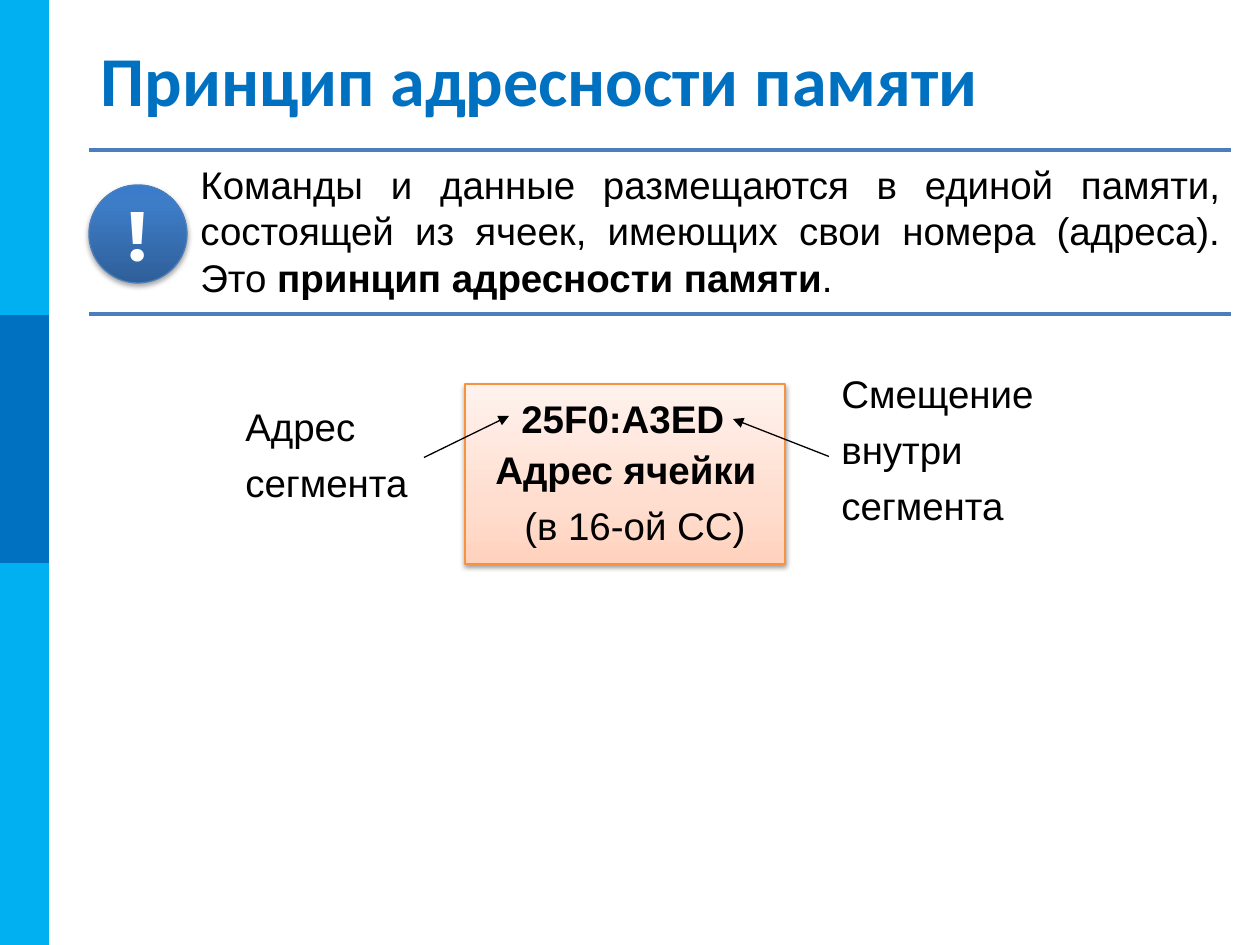
from lxml import etree
from pptx import Presentation
from pptx import util as u
from pptx.dml.color import RGBColor
from pptx.enum import shapes, text
from pptx.oxml import ns

PX = 914400 // 126
COLORS = {
    "sky": "00B0F0", "blue": "0070C0", "rule": "4B7EBC", "orange": "F69240",
    "black": "000000", "white": "FFFFFF",
}
PEACH = [(0, "FFD2BD"), (35, "FFDED0"), (100, "FFF2ED")]
NAVY = [(0, "2F5F99"), (80, "3D7CC7"), (100, "3A7CCB")]
LEFT, CENTER, JUSTIFY = (text.PP_ALIGN.LEFT, text.PP_ALIGN.CENTER,
                         text.PP_ALIGN.JUSTIFY)


def px(n):
    return u.Emu(n * PX)


def rgb(name):
    return RGBColor.from_string(COLORS[name])


def add_xml(parent, tag, **attrs):
    return etree.SubElement(parent, ns.qn(tag), {k: str(v) for k, v in attrs.items()})


class Deck:
    """Holds the text style and the current slide."""
    font, size, gap = "Arial", 22, 5.5

    def __init__(self, width, height):
        self.prs = Presentation()
        self.prs.slide_width, self.prs.slide_height = px(width), px(height)
        self.s = self.prs.slides.add_slide(self.prs.slide_layouts[5])

    def run(self, p, words, bold=False, color="black", font=None, size=None):
        r = p.add_run()
        r.text = words
        r.font.name, r.font.size = font or self.font, u.Pt(size or self.size)
        r.font.bold, r.font.color.rgb = bold, rgb(color)

    def title(self, x, y, w, h, words):
        sp = self.s.shapes.title
        sp.left, sp.top, sp.width, sp.height = map(px, (x, y, w, h))
        tf = sp.text_frame
        tf.auto_size = text.MSO_AUTO_SIZE.NONE
        tf.vertical_anchor = text.MSO_ANCHOR.MIDDLE
        p = tf.paragraphs[0]
        p.alignment = LEFT
        self.run(p, words, True, "blue", "Calibri", 40)

    def shape(self, kind, x, y, w, h, fill=None, line=None, stops=None, shadow=38):
        """Draw a flat shape, or one with gradient stops and a soft shadow."""
        sp = self.s.shapes.add_shape(kind, *map(px, (x, y, w, h)))
        sp.shadow.inherit = False
        if line:
            sp.line.color.rgb, sp.line.width = rgb(line), u.Pt(0.75)
        else:
            sp.line.fill.background()
        if stops:
            self.gradient(sp, stops)
            self.soft_shadow(sp, shadow)
        else:
            sp.fill.solid()
            sp.fill.fore_color.rgb = rgb(fill)
        return sp

    def gradient(self, sp, stops):
        sp.fill.gradient()
        sp.fill.gradient_angle = 90
        gs_list = sp.element.spPr.find(".//" + ns.qn("a:gsLst"))
        for gs in list(gs_list):
            gs_list.remove(gs)
        for pos, color in stops:
            add_xml(add_xml(gs_list, "a:gs", pos=pos * 1000), "a:srgbClr", val=color)

    def soft_shadow(self, sp, opacity):
        effects = sp.element.spPr.find(ns.qn("a:effectLst"))
        outer = add_xml(effects, "a:outerShdw", blurRad=u.Pt(3.1), dist=u.Pt(1.7),
                        dir=5400000, rotWithShape=0)
        color = add_xml(outer, "a:srgbClr", val=COLORS["black"])
        add_xml(color, "a:alpha", val=opacity * 1000)

    def text(self, x, y, w, h, *paragraphs, gap=None):
        """Add a box; each paragraph is (alignment, (words, bold), ...)."""
        sp = self.s.shapes.add_textbox(*map(px, (x, y, w, h)))
        tf = sp.text_frame
        tf.word_wrap = True
        for i, (align, *runs) in enumerate(paragraphs):
            p = tf.add_paragraph() if i else tf.paragraphs[0]
            p.alignment = align
            p.space_before = u.Pt(self.gap if gap is None else gap)
            for words, bold in runs:
                self.run(p, words, bold)
        return sp

    def line(self, x1, y1, x2, y2, color, width):
        c = self.s.shapes.add_connector(shapes.MSO_CONNECTOR.STRAIGHT,
                                        *map(px, (x1, y1, x2, y2)))
        c.line.color.rgb, c.line.width = rgb(color), u.Pt(width)
        add_xml(c.element.spPr, "a:effectLst")
        return c

    def arrow(self, label, side, x, y):
        """Point from the middle of a label's side to (x, y)."""
        c = self.line(x, y, x, y, "black", 0.75)
        c.begin_connect(label, side)
        c.end_x, c.end_y = px(x), px(y)
        add_xml(c.line._get_or_add_ln(), "a:tailEnd", type="triangle")


def main():
    deck = Deck(1260, 945)
    rect, oval = shapes.MSO_SHAPE.RECTANGLE, shapes.MSO_SHAPE.OVAL

    deck.shape(rect, 0, 0, 49, 945, "sky")
    deck.shape(rect, 0, 315, 49, 248, "blue")
    deck.title(88, 38, 1137, 81, "Принцип адресности памяти")

    deck.shape(rect, 465, 384, 320, 180, line="orange", stops=PEACH)
    deck.text(483, 440, 304, 52, (JUSTIFY, ("Адрес ячейки", True)),
              (CENTER, ("(в 16-ой СС)", False)))
    deck.text(509, 389, 236, 54, (JUSTIFY, ("25F0:A3ED", True)))
    segment = deck.text(233, 397, 191, 121,
                        *[(JUSTIFY, (w, False)) for w in ("Адрес", "сегмента")])
    offset = deck.text(829, 364, 246, 185,
                       *[(JUSTIFY, (w, False))
                         for w in ("Смещение", "внутри", "сегмента")])
    deck.arrow(segment, 3, 509, 416)
    deck.arrow(offset, 1, 733, 419)

    badge = deck.shape(oval, 89, 185, 98, 98, line="rule", stops=NAVY, shadow=35)
    tf = badge.text_frame
    tf.vertical_anchor = text.MSO_ANCHOR.MIDDLE
    p = tf.paragraphs[0]
    p.alignment = CENTER
    deck.run(p, "!", True, "white", "Montserrat", 40)

    for y in (150, 314):
        deck.line(89, y, 1231, y, "rule", 2.25)
    deck.text(188, 155, 1045, 144,
              (JUSTIFY,
               ("Команды и данные размещаются в единой памяти, состоящей из ячеек, "
                "имеющих свои номера (адреса). Это ", False),
               ("принцип адресности памяти", True), (".", False)), gap=0)

    deck.prs.save("out.pptx")


if __name__ == "__main__":
    main()
